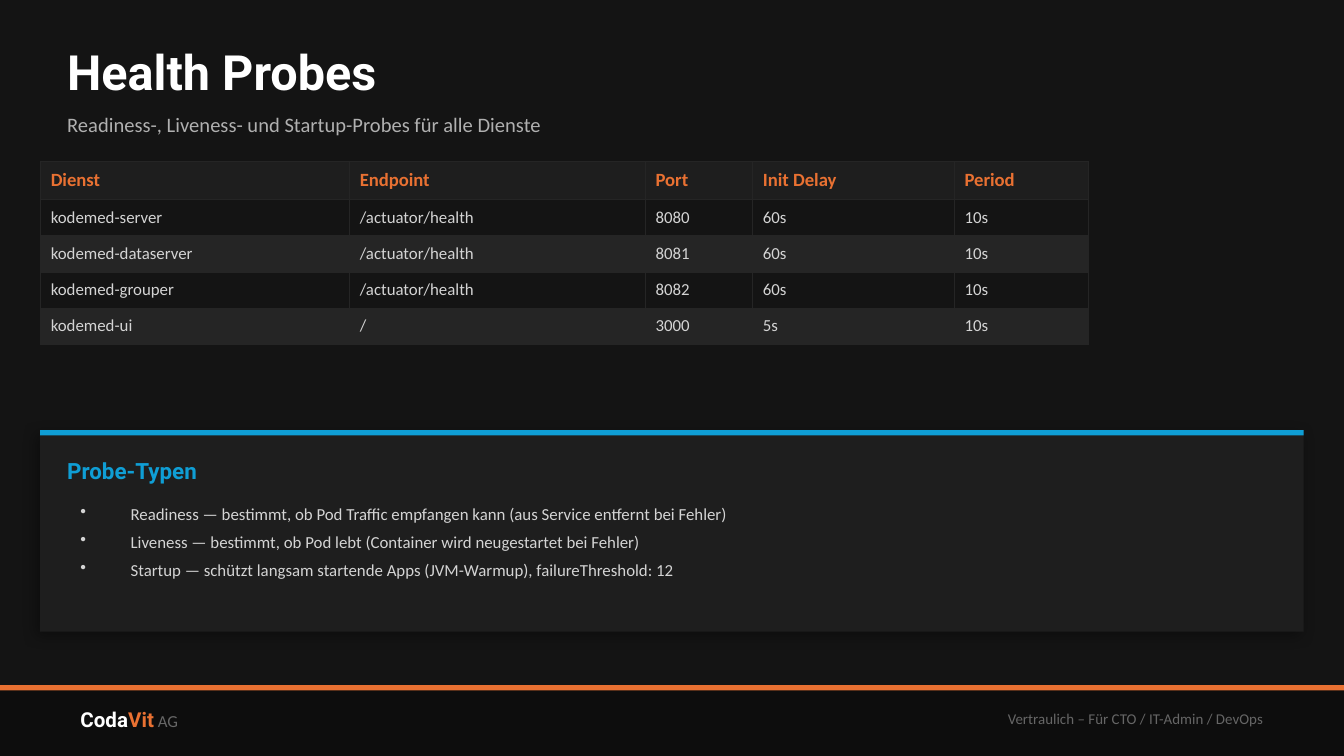
from lxml.etree import SubElement
from pptx import Presentation
from pptx.dml.color import RGBColor
from pptx.enum.shapes import MSO_SHAPE
from pptx.enum.text import MSO_ANCHOR, PP_ALIGN
from pptx.oxml.ns import qn
from pptx.util import Cm, Pt

COLORS = {
    "page": "141414", "footer": "0D0D0D", "panel": "1E1E1E", "stripe": "252525",
    "orange": "E97132", "blue": "0F9ED5", "white": "FFFFFF", "body": "D4D4D4",
    "subtitle": "B0B0B0", "muted": "666666", "shadow": "000000",
}
PAGE_WIDTH, PAGE_HEIGHT = 25.4, 14.29
BAR_HEIGHT = 0.1
HEADER_ROW, BODY_ROW = 0.7, 0.67

COLUMN_WIDTHS = [5.84, 5.59, 2.03, 3.81, 2.54]
PROBES = [
    ["Dienst", "Endpoint", "Port", "Init Delay", "Period"],
    ["kodemed-server", "/actuator/health", "8080", "60s", "10s"],
    ["kodemed-dataserver", "/actuator/health", "8081", "60s", "10s"],
    ["kodemed-grouper", "/actuator/health", "8082", "60s", "10s"],
    ["kodemed-ui", "/", "3000", "5s", "10s"],
]
PROBE_TYPES = [
    "Readiness — bestimmt, ob Pod Traffic empfangen kann (aus Service entfernt bei Fehler)",
    "Liveness — bestimmt, ob Pod lebt (Container wird neugestartet bei Fehler)",
    "Startup — schützt langsam startende Apps (JVM-Warmup), failureThreshold: 12",
]


def color(name):
    return RGBColor.from_string(COLORS[name])


def add_span(para, text, size=9, fill="body", font="Calibri", bold=False):
    span = para.add_run()
    span.text = text
    span.font.size = Pt(size)
    span.font.name = font
    span.font.bold = bold
    span.font.color.rgb = color(fill)


def add_box(page, left, top, width, height, inset=True, anchor=MSO_ANCHOR.MIDDLE):
    """Add an empty text box and return its text frame."""
    box = page.shapes.add_textbox(Cm(left), Cm(top), Cm(width), Cm(height))
    frame = box.text_frame
    frame.word_wrap = True
    frame.vertical_anchor = anchor
    if not inset:
        frame.margin_left = frame.margin_right = 0
        frame.margin_top = frame.margin_bottom = 0
    return frame


def add_rectangle(page, left, top, width, height, fill):
    shape = page.shapes.add_shape(
        MSO_SHAPE.RECTANGLE, Cm(left), Cm(top), Cm(width), Cm(height))
    shape.fill.solid()
    shape.fill.fore_color.rgb = color(fill)
    shape.line.fill.background()
    shape.shadow.inherit = False
    return shape


def cast_shadow(shape):
    effects = shape.element.spPr.find(qn("a:effectLst"))
    shadow = SubElement(effects, qn("a:outerShdw"), blurRad=str(Pt(8)),
                        dist=str(Pt(3)), dir=str(135 * 60000),
                        algn="bl", rotWithShape="0")
    tint = SubElement(shadow, qn("a:srgbClr"), val=COLORS["shadow"])
    SubElement(tint, qn("a:alpha"), val="35000")


def add_bullet(para):
    properties = para._p.get_or_add_pPr()
    properties.set("marL", str(Cm(0.95)))
    properties.set("indent", str(-Cm(0.95)))
    SubElement(properties, qn("a:buChar"), char="•")


def add_borders(cell):
    properties = cell._tc.get_or_add_tcPr()
    for index, side in enumerate(("lnL", "lnR", "lnT", "lnB")):
        line = properties.makeelement(qn(f"a:{side}"), {"w": str(Pt(0.5))})
        fill = SubElement(line, qn("a:solidFill"))
        SubElement(fill, qn("a:srgbClr"), val=COLORS["stripe"])
        properties.insert(index, line)


def add_footer(page, left, top, width, height):
    add_rectangle(page, left, top, width, height, "footer")
    add_rectangle(page, left, top, width, BAR_HEIGHT, "orange")

    brand = add_box(page, left + 1.27, top + 0.13, 7.62, 1.02).paragraphs[0]
    add_span(brand, "Coda", size=11, fill="white", font="Roboto", bold=True)
    add_span(brand, "Vit", size=11, fill="orange", font="Roboto", bold=True)
    add_span(brand, " AG", fill="muted")

    notice = add_box(page, left + width - 11.43, top + 0.13, 10.16, 1.02).paragraphs[0]
    notice.alignment = PP_ALIGN.RIGHT
    add_span(notice, "Vertraulich – Für CTO / IT-Admin / DevOps", size=8, fill="muted")


def add_heading(page, left, top, width):
    title = add_box(page, left, top, width, 1.4, inset=False)
    add_span(title.paragraphs[0], "Health Probes",
             size=26, fill="white", font="Roboto", bold=True)
    subtitle = add_box(page, left, top + 1.27, width, 0.89, inset=False)
    add_span(subtitle.paragraphs[0],
             "Readiness-, Liveness- und Startup-Probes für alle Dienste",
             size=11, fill="subtitle")


def add_probe_table(page, left, top):
    height = HEADER_ROW + BODY_ROW * (len(PROBES) - 1)
    table = page.shapes.add_table(
        len(PROBES), len(COLUMN_WIDTHS), Cm(left), Cm(top),
        Cm(sum(COLUMN_WIDTHS)), Cm(height)).table
    for column, width in zip(table.columns, COLUMN_WIDTHS):
        column.width = Cm(width)

    for row_index, values in enumerate(PROBES):
        is_header = row_index == 0
        table.rows[row_index].height = Cm(HEADER_ROW if is_header else BODY_ROW)
        background = "panel" if is_header else ("stripe", "page")[row_index % 2]
        for column_index, value in enumerate(values):
            cell = table.cell(row_index, column_index)
            cell.margin_left = cell.margin_right = Cm(0.2)
            cell.margin_top = cell.margin_bottom = Cm(0.15)
            cell.vertical_anchor = MSO_ANCHOR.MIDDLE
            cell.fill.solid()
            cell.fill.fore_color.rgb = color(background)
            add_borders(cell)
            add_span(cell.text_frame.paragraphs[0], value,
                     size=10 if is_header else 9,
                     fill="orange" if is_header else "body", bold=is_header)


def add_type_panel(page, left, top, width, height):
    cast_shadow(add_rectangle(page, left, top, width, height, "panel"))
    add_rectangle(page, left, top, width, BAR_HEIGHT, "blue")

    text_left, text_width = left + 0.51, width - 1.02
    heading = add_box(page, text_left, top + 0.38, text_width, 0.76, inset=False)
    add_span(heading.paragraphs[0], "Probe-Typen",
             size=12, fill="blue", font="Roboto", bold=True)

    frame = add_box(page, text_left, top + 1.27, text_width, 2.29, anchor=MSO_ANCHOR.TOP)
    for index, text in enumerate(PROBE_TYPES):
        para = frame.add_paragraph() if index else frame.paragraphs[0]
        add_bullet(para)
        para.space_after = Pt(4)
        add_span(para, text)


def main():
    deck = Presentation()
    deck.slide_width, deck.slide_height = Cm(PAGE_WIDTH), Cm(PAGE_HEIGHT)
    page = deck.slides.add_slide(deck.slide_layouts[6])
    page.background.fill.solid()
    page.background.fill.fore_color.rgb = color("page")

    add_footer(page, 0, 12.95, PAGE_WIDTH, PAGE_HEIGHT - 12.95)
    add_heading(page, 1.27, 0.64, 22.86)
    add_probe_table(page, 0.76, 3.05)
    add_type_panel(page, 0.76, 8.13, 23.88, 3.81)
    deck.save("out.pptx")


if __name__ == "__main__":
    main()
